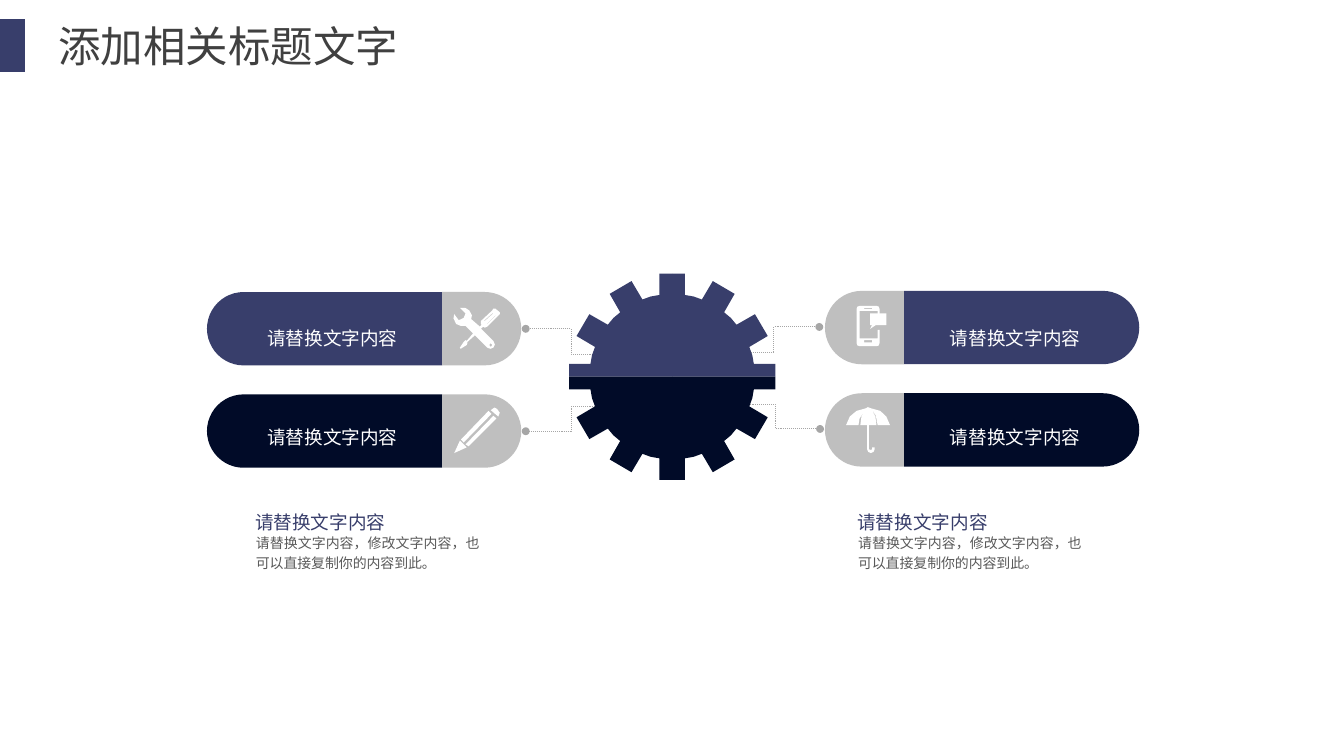
from dataclasses import dataclass
from math import asin, cos, radians, sin

from lxml import etree
from pptx import Presentation, util as u
from pptx.dml.color import RGBColor
from pptx.enum import dml, shapes, text
from pptx.oxml.ns import qn
from pptx.shapes.autoshape import Shape
from pptx.shapes.shapetree import SlideShapes
from pptx.text.text import TextFrame

BLUE = RGBColor(0x38, 0x3E, 0x6B)
NAVY = RGBColor(0x01, 0x0B, 0x28)
SILVER = RGBColor(0xBF, 0xBF, 0xBF)
GREY = RGBColor(0xA6, 0xA6, 0xA6)
WHITE = RGBColor(0xFF, 0xFF, 0xFF)
INK = RGBColor(0x40, 0x40, 0x40)
SLATE = RGBColor(0x59, 0x59, 0x59)

FONT = "Arial"
LABEL = "请替换文字内容"
DETAIL = "请替换文字内容，修改文字内容，也可以直接复制你的内容到此。"
CENTRE = (17.86, 10.01)
OUTER, INNER, TOOTH = 2.74, 2.2, 0.34
HEIGHT, LONG, SHORT = 1.95, 6.25, 2.1

Point = tuple[float, float]
Loop = list[tuple[int, int]]


@dataclass
class Pill:
    left: float
    top: float
    color: RGBColor
    flip: bool


@dataclass
class Link:
    start: Point
    end: Point


@dataclass
class Note:
    left: float
    top: float
    width: float
    height: float
    words: str
    size: float
    color: RGBColor
    align: text.PP_ALIGN
    inset: Point = (0, 0)


@dataclass
class Icon:
    left: float
    top: float
    loops: list[Loop]


PILLS = [
    Pill(5.5, 7.76, BLUE, False),
    Pill(5.5, 10.48, NAVY, False),
    Pill(21.92, 7.73, BLUE, True),
    Pill(21.92, 10.45, NAVY, True),
]

LINKS = [
    Link((19.41, 10.74), (21.79, 11.4)),
    Link((19.35, 9.37), (21.77, 8.69)),
    Link((16.38, 10.8), (13.97, 11.46)),
    Link((16.38, 9.42), (13.97, 8.74)),
]

NOTES = [
    Note(left, top, 4.11, 0.91, LABEL, 14, WHITE, text.PP_ALIGN.CENTER, (0.25, 0.13))
    for left in (6.78, 24.92) for top in (8.44, 11.07)
]
for left in (6.78, 22.78):
    NOTES += [
        Note(left, 13.46, 4.9, 0.66, LABEL, 14, BLUE, text.PP_ALIGN.JUSTIFY),
        Note(left + 0.02, 14.12, 5.95, 1.04, DETAIL, 10.5, SLATE, text.PP_ALIGN.JUSTIFY),
    ]

TOOLS = Icon(12.04, 8.15, [
    [(124, 15), (112, 5), (107, 5), (104, 10), (74, 38), (74, 46), (76, 48), (71, 53),
     (48, 33), (50, 23), (43, 10), (32, 3), (18, 3), (33, 18), (28, 30), (15, 36),
     (3, 20), (1, 31), (8, 46), (20, 51), (33, 51), (53, 71), (36, 91), (33, 89),
     (28, 94), (18, 109), (20, 112), (36, 102), (38, 97), (38, 94), (58, 76), (91, 109),
     (99, 112), (107, 109), (111, 101), (107, 91), (74, 58), (81, 53), (84, 56),
     (91, 53), (119, 25), (124, 20)],
    [(100, 97), (104, 102), (100, 107), (96, 102)],
    [(84, 38), (81, 38), (104, 18), (107, 18)],
    [(91, 46), (89, 46), (112, 23), (112, 25)],
])
PENCIL = Icon(12.07, 10.82, [
    [(15, 89), (0, 122), (33, 107)],
    [(91, 10), (18, 86), (25, 94), (99, 18)],
    [(104, 23), (30, 99), (38, 104), (112, 30)],
    [(97, 8), (107, 1), (114, 5), (121, 15), (117, 25)],
])
PHONE = Icon(22.76, 8.13, [
    [(56, 86), (8, 86), (8, 13), (56, 13), (56, 28), (61, 28), (61, 8), (59, 2),
     (53, 0), (8, 0), (2, 2), (0, 8), (0, 99), (2, 105), (8, 107), (53, 107),
     (59, 105), (61, 99), (61, 64), (56, 64)],
    [(20, 5), (41, 5), (41, 8), (20, 8)],
    [(20, 91), (41, 91), (41, 97), (20, 97)],
])
BUBBLE = Icon(23.12, 8.33, [
    [(0, 31), (5, 31), (0, 41), (15, 31), (43, 31), (43, 0), (0, 0)],
])
BROLLY = Icon(22.48, 10.82, [
    [(84, 48), (117, 48), (107, 25), (91, 10), (66, 3), (58, 0), (53, 3), (28, 10),
     (10, 25), (0, 48), (33, 48), (36, 30), (53, 4), (41, 25), (38, 48), (56, 48),
     (56, 112), (59, 119), (66, 122), (73, 119), (76, 112), (76, 107), (69, 107),
     (69, 112), (66, 114), (61, 112), (61, 48), (81, 48), (78, 25), (66, 3),
     (79, 22), (84, 48)],
])
ICONS = [TOOLS, PENCIL, PHONE, BUBBLE, BROLLY]


def paint(shape: Shape, color: RGBColor) -> None:
    shape.shadow.inherit = False
    shape.fill.solid()
    shape.fill.fore_color.rgb = color
    shape.line.fill.background()


def draw_link(tree: SlideShapes, link: Link) -> None:
    ends = [u.Cm(n) for n in link.start + link.end]
    wire = tree.add_connector(shapes.MSO_CONNECTOR.ELBOW, *ends)
    wire.line.color.rgb = GREY
    wire.line.width = u.Pt(0.75)
    wire.line.dash_style = dml.MSO_LINE.ROUND_DOT
    props = wire.element.spPr
    for tag in ("a:headEnd", "a:tailEnd"):
        etree.SubElement(props.find(qn("a:ln")), qn(tag), type="oval")
    etree.SubElement(props, qn("a:effectLst"))


def draw_half(tree: SlideShapes, left: float, top: float, length: float,
              color: RGBColor, turn: int) -> None:
    shift = (length - HEIGHT) / 2
    half = tree.add_shape(shapes.MSO_SHAPE.ROUND_2_SAME_RECTANGLE, u.Cm(left + shift),
                          u.Cm(top - shift), u.Cm(HEIGHT), u.Cm(length))
    half.adjustments[0] = 0.5
    half.adjustments[1] = 0
    half.rotation = turn
    paint(half, color)


def draw_pill(tree: SlideShapes, pill: Pill) -> None:
    parts = [(LONG, pill.color), (SHORT, SILVER)]
    if pill.flip:
        parts.reverse()
    left = pill.left
    for (length, color), turn in zip(parts, (270, 90)):
        draw_half(tree, left, pill.top, length, color, turn)
        left += length


def draw_loops(tree: SlideShapes, loops: list[Loop], left: float, top: float,
               color: RGBColor) -> None:
    pen = tree.build_freeform(*loops[0][0], scale=u.Cm(0.01))
    for loop in loops:
        pen.move_to(*loop[0])
        pen.add_line_segments(loop[1:], close=True)
    paint(pen.convert_to_shape(u.Cm(left), u.Cm(top)), color)


def draw_gear(tree: SlideShapes, across: int, down: int, color: RGBColor) -> None:
    base = INNER * cos(asin(TOOTH / INNER))
    spots: list[Point] = []
    for step in range(4):
        turn = radians(30 * step)
        for reach, side in ((base, -TOOTH), (OUTER, -TOOTH), (OUTER, TOOTH), (base, TOOTH)):
            spots.append((reach * cos(turn) - side * sin(turn),
                          reach * sin(turn) + side * cos(turn)))
        if step < 3:
            middle = turn + radians(15)
            spots.append((INNER * cos(middle), INNER * sin(middle)))
    loop = [(0, 0)] + [(across * round(100 * max(x, 0)), down * round(100 * max(y, 0)))
                       for x, y in spots]
    draw_loops(tree, [loop], *CENTRE, color)


def write(frame: TextFrame, words: str, size: float, color: RGBColor,
          align: text.PP_ALIGN, inset: Point) -> None:
    frame.text = words
    frame.word_wrap = True
    frame.auto_size = text.MSO_AUTO_SIZE.NONE
    frame.margin_left = frame.margin_right = u.Cm(inset[0])
    frame.margin_top = frame.margin_bottom = u.Cm(inset[1])
    line = frame.paragraphs[0]
    line.alignment = align
    font = line.runs[0].font
    font.name = FONT
    font.size = u.Pt(size)
    font.color.rgb = color


def draw_note(tree: SlideShapes, note: Note) -> None:
    box = tree.add_textbox(u.Cm(note.left), u.Cm(note.top), u.Cm(note.width), u.Cm(note.height))
    write(box.text_frame, note.words, note.size, note.color, note.align, note.inset)
    box.text_frame.paragraphs[0].line_spacing = 1.2


def main() -> None:
    deck = Presentation()
    deck.slide_width, deck.slide_height = u.Cm(35.71), u.Cm(20.09)
    tree = deck.slides.add_slide(deck.slide_layouts[5]).shapes

    title = tree.title
    title.left, title.top = u.Cm(1.55), u.Cm(0.53)
    title.width, title.height = u.Cm(11), u.Cm(1.37)
    write(title.text_frame, "添加相关标题文字", 32, INK, text.PP_ALIGN.LEFT, (0, 0))
    title.text_frame.vertical_anchor = text.MSO_ANCHOR.MIDDLE
    mark = tree.add_shape(shapes.MSO_SHAPE.RECTANGLE, 0, u.Cm(0.51), u.Cm(0.66), u.Cm(1.4))
    paint(mark, BLUE)

    for link in LINKS:
        draw_link(tree, link)
    for pill in PILLS:
        draw_pill(tree, pill)
    for down, color in ((-1, BLUE), (1, NAVY)):
        for across in (-1, 1):
            draw_gear(tree, across, down, color)
    for icon in ICONS:
        draw_loops(tree, icon.loops, icon.left, icon.top, WHITE)
    for note in NOTES:
        draw_note(tree, note)
    deck.save("out.pptx")


if __name__ == "__main__":
    main()
